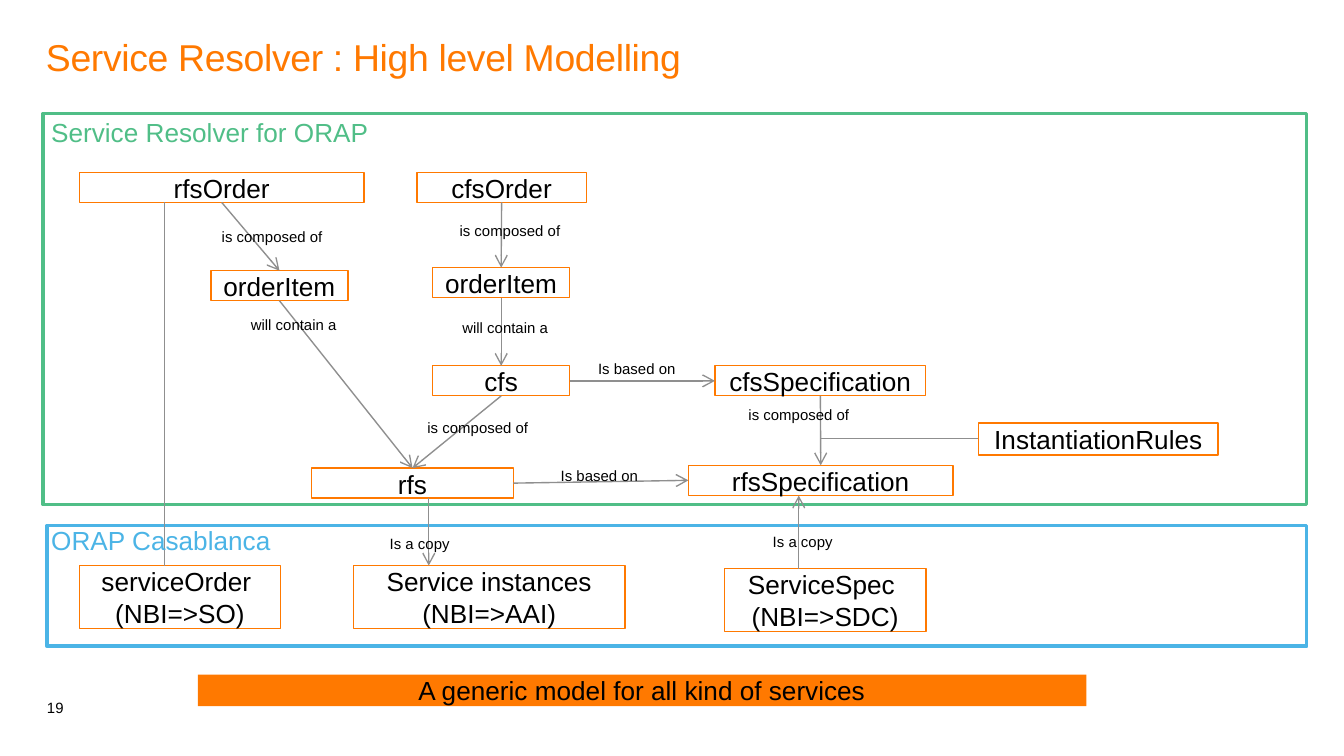
import pptx
import pptx.dml.color
import pptx.enum.shapes
import pptx.enum.text
import pptx.oxml.ns
import pptx.util
import lxml.etree

Pt = pptx.util.Pt
ALIGN = pptx.enum.text.PP_ALIGN
ANCHOR = pptx.enum.text.MSO_ANCHOR
COLORS = {
    "orange": "FF7900",
    "green": "50BE87",
    "blue": "4BB4E6",
    "grey": "8F8F8F",
    "black": "000000",
    "white": "FFFFFF",
}
TOP, LEFT, BOTTOM, RIGHT = range(4)
ROW = 16.1
DOUBLE_ROW = 33.8


class Diagram:
    font = "Arial"

    def __init__(self, slide):
        self.slide = slide

    def color(self, name):
        return pptx.dml.color.RGBColor.from_string(COLORS[name])

    def set_text(self, shape, text, size, color, align=ALIGN.LEFT, anchor=ANCHOR.TOP):
        frame = shape.text_frame
        frame.text = text
        frame.word_wrap = True
        frame.vertical_anchor = anchor
        frame.margin_left = frame.margin_right = frame.margin_top = frame.margin_bottom = 0
        for paragraph in frame.paragraphs:
            paragraph.alignment = align
            for run in paragraph.runs:
                run.font.name = self.font
                run.font.size = Pt(size)
                run.font.color.rgb = self.color(color)
        return frame

    def title(self, text, left, top, width, height):
        title = self.slide.shapes.title
        title.left, title.top, title.width, title.height = map(Pt, (left, top, width, height))
        paragraph = self.set_text(title, text, 20, "orange").paragraphs[0]
        paragraph.line_spacing = 0.9
        paragraph.runs[0].font._element.set("spc", "-20")

    def label(self, text, left, top, width=67.7, height=9.2, size=8, color="black", anchor=ANCHOR.TOP):
        box = self.slide.shapes.add_textbox(Pt(left), Pt(top), Pt(width), Pt(height))
        return self.set_text(box, text, size, color, anchor=anchor)

    def box(self, text, left, top, width, height=ROW, fill=None, line="orange", weight=0.75):
        box = self.slide.shapes.add_shape(
            pptx.enum.shapes.MSO_SHAPE.RECTANGLE, Pt(left), Pt(top), Pt(width), Pt(height))
        box.shadow.inherit = False
        if fill:
            box.fill.solid()
            box.fill.fore_color.rgb = self.color(fill)
        else:
            box.fill.background()
        if line:
            box.line.color.rgb = self.color(line)
            box.line.width = Pt(weight)
        else:
            box.line.fill.background()
        if text:
            self.set_text(box, text, 14, "black", ALIGN.CENTER)
        return box

    def line(self, x1=0, y1=0, x2=0, y2=0, arrow=True):
        line = self.slide.shapes.add_connector(
            pptx.enum.shapes.MSO_CONNECTOR.STRAIGHT, Pt(x1), Pt(y1), Pt(x2), Pt(y2))
        line.line.color.rgb = self.color("grey")
        line.line.width = Pt(0.75)
        if arrow:
            outline = line.line._get_or_add_ln()
            lxml.etree.SubElement(outline, pptx.oxml.ns.qn("a:tailEnd"), type="arrow")
        lxml.etree.SubElement(line._element.spPr, pptx.oxml.ns.qn("a:effectLst"))
        return line

    def link(self, source, source_side, target, target_side):
        line = self.line()
        line.begin_connect(source, source_side)
        line.end_connect(target, target_side)


def main():
    deck = pptx.Presentation()
    deck.slide_width, deck.slide_height = Pt(720), Pt(405)
    diagram = Diagram(deck.slides.add_slide(deck.slide_layouts[5]))

    diagram.title("Service Resolver : High level Modelling", 24.6, 20.9, 670.3, 28.1)
    diagram.box("", 23.2, 60.8, 676.8, 209.5, "white", "green", 2)
    diagram.box("", 25.4, 281.5, 674.6, 64.8, "white", "blue", 2)

    cfs_order = diagram.box("cfsOrder", 223.4, 92.4, 90.7)
    cfs_item = diagram.box("orderItem", 231.8, 143.4, 73.4)
    cfs = diagram.box("cfs", 231.8, 196, 73.4)
    cfs_specification = diagram.box("cfsSpecification", 383, 196, 113)
    rfs_order = diagram.box("rfsOrder", 42.5, 92.4, 152.6)
    rfs_item = diagram.box("orderItem", 113, 145, 73.4)
    rfs = diagram.box("rfs", 167, 250.8, 108)
    rfs_specification = diagram.box("rfsSpecification", 368.8, 249.3, 141.8)
    diagram.box("InstantiationRules", 524.2, 226.6, 128.4, 17.3)
    diagram.box("serviceOrder \n(NBI=>SO)", 42.5, 303, 108, DOUBLE_ROW)
    diagram.box("Service instances\n(NBI=>AAI)", 189.4, 303, 145.4, DOUBLE_ROW)
    diagram.box("ServiceSpec \n(NBI=>SDC)", 388.1, 304.6, 108, DOUBLE_ROW)
    diagram.box("A generic model for all kind of services", 106, 361.4, 476, 17, "orange", None)

    for source, source_side, target, target_side in (
        (cfs_order, BOTTOM, cfs_item, TOP),
        (cfs_item, BOTTOM, cfs, TOP),
        (cfs, RIGHT, cfs_specification, LEFT),
        (cfs, BOTTOM, rfs, TOP),
        (rfs, RIGHT, rfs_specification, LEFT),
        (cfs_specification, BOTTOM, rfs_specification, TOP),
        (rfs_order, BOTTOM, rfs_item, TOP),
        (rfs_item, BOTTOM, rfs, TOP),
    ):
        diagram.link(source, source_side, target, target_side)
    diagram.line(88, 108.5, 88, 303, arrow=False)
    diagram.line(439.7, 234.8, 524.2, 234.8, arrow=False)
    diagram.line(427.9, 304.6, 427.9, 265.5)
    diagram.line(229.7, 267, 229.7, 303)

    for text, left, top in (
        ("is composed of", 246.2, 118.9),
        ("will contain a", 247.7, 170.9),
        ("Is based on", 320.4, 192.4),
        ("Is based on", 300.4, 249.8),
        ("is composed of", 229, 224.3),
        ("is composed of", 401, 217.4),
        ("will contain a", 134.4, 168.8),
        ("is composed of", 118.8, 121.7),
        ("Is a copy", 414, 285.1),
        ("Is a copy", 208.8, 286.6),
    ):
        diagram.label(text, left, top)
    diagram.label("Service Resolver for ORAP", 27.4, 62.2, 286.6, 17, 14, "green")
    diagram.label("ORAP Casablanca", 27.4, 281, 128.2, 17, 14, "blue")

    page_number = diagram.label("19", 25.2, 357.1, 21.6, 26.6, anchor=ANCHOR.BOTTOM).paragraphs[0]
    page_number.line_spacing = 0.85
    page_number.space_after = Pt(12)

    deck.save("out.pptx")


if __name__ == "__main__":
    main()
